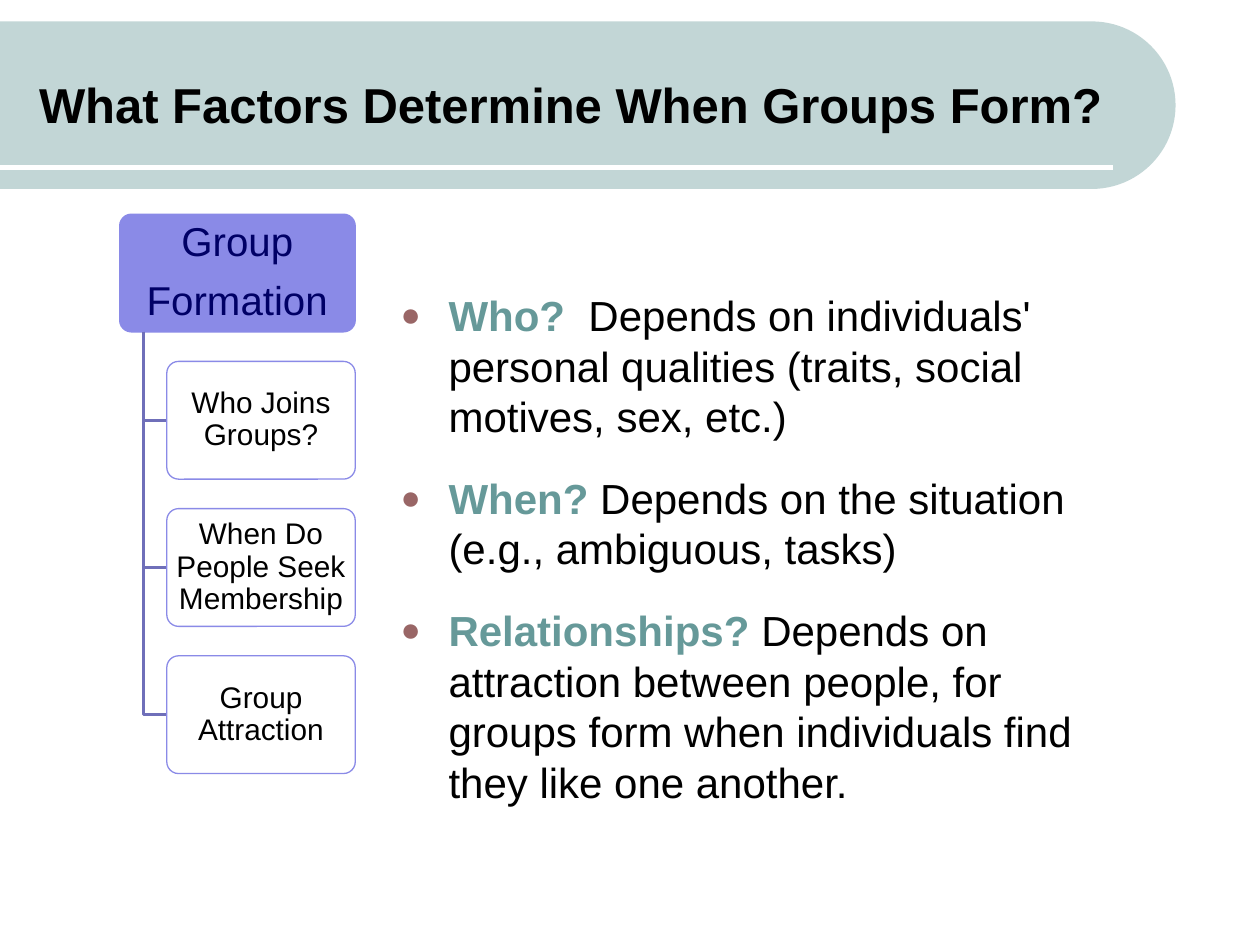
from lxml import etree
from pptx import Presentation
from pptx.dml.color import RGBColor
from pptx.enum.shapes import MSO_CONNECTOR, MSO_SHAPE
from pptx.enum.text import MSO_ANCHOR, MSO_AUTO_SIZE, PP_ALIGN
from pptx.oxml.ns import qn
from pptx.util import Inches, Pt

STRAIGHT = MSO_CONNECTOR.STRAIGHT
ROUNDED = MSO_SHAPE.ROUNDED_RECTANGLE
ROUND_END = MSO_SHAPE.ROUND_2_SAME_RECTANGLE
MIDDLE, TOP = MSO_ANCHOR.MIDDLE, MSO_ANCHOR.TOP
LEFT, CENTER = PP_ALIGN.LEFT, PP_ALIGN.CENTER
NO_FIT = MSO_AUTO_SIZE.NONE

COLORS = {
    "band": "C2D6D6", "white": "FFFFFF", "text": "000000", "navy": "000066",
    "keyword": "669999", "bullet": "996666", "root": "8A8AE7", "branch": "6F6FB9",
}
TITLE = "What Factors Determine When Groups Form?"
ROOT = ["Group", "Formation"]
QUESTIONS = ["Who Joins Groups?", "When Do People Seek Membership", "Group Attraction"]
FACTORS = [
    ("Who?  ", "Depends on individuals' personal qualities (traits, social motives, sex, etc.)"),
    ("When? ", "Depends on the situation (e.g., ambiguous, tasks)"),
    ("Relationships? ", "Depends on attraction between people, for groups form when "
                        "individuals find they like one another."),
]


def rgb(name):
    return RGBColor.from_string(COLORS[name])


def add_text(paragraph, text, size, color="text", bold=False):
    run = paragraph.add_run()
    run.text = text
    run.font.name = "Arial"
    run.font.size = Pt(size)
    run.font.bold = bold
    run.font.color.rgb = rgb(color)


def place(shape, left, top, width, height):
    shape.left, shape.top = Inches(left), Inches(top)
    shape.width, shape.height = Inches(width), Inches(height)


def paragraphs(frame, count):
    """Return the frame's first paragraph and as many new ones as needed."""
    return [frame.paragraphs[0]] + [frame.add_paragraph() for _ in range(count - 1)]


def set_bullet(paragraph, indent):
    props = paragraph._p.get_or_add_pPr()
    props.set("marL", str(Inches(indent)))
    props.set("indent", str(-Inches(indent)))
    color = etree.SubElement(props, qn("a:buClr"))
    etree.SubElement(color, qn("a:srgbClr")).set("val", COLORS["bullet"])
    etree.SubElement(props, qn("a:buSzPct")).set("val", "80000")
    etree.SubElement(props, qn("a:buFont")).set("typeface", "Arial")
    etree.SubElement(props, qn("a:buChar")).set("char", "●")


def add_header(slide, left, top, width, height):
    """Draw the round-ended band with its rule, and set the title over it."""
    # The band is an upright shape turned a quarter, about the same centre.
    offset = (width - height) / 2
    band = slide.shapes.add_shape(ROUND_END, Inches(left + offset), Inches(top - offset),
                                  Inches(height), Inches(width))
    band.rotation = 90
    band.adjustments[0], band.adjustments[1] = 0.5, 0
    band.shadow.inherit = False
    band.fill.solid()
    band.fill.fore_color.rgb = rgb("band")
    band.line.fill.background()

    rule_y = Inches(top + height - 0.17)
    rule = slide.shapes.add_connector(STRAIGHT, Inches(left), rule_y,
                                      Inches(left + width - 0.5), rule_y)
    rule.line.color.rgb = rgb("white")
    rule.line.width = Pt(3)
    etree.SubElement(rule._element.spPr, qn("a:effectLst"))

    title = slide.shapes.title
    place(title, left + 0.21, top + 0.08, 8.77, 1)
    frame = title.text_frame
    frame.auto_size, frame.word_wrap = NO_FIT, True
    frame.vertical_anchor = MIDDLE
    heading = frame.paragraphs[0]
    heading.alignment = LEFT
    add_text(heading, TITLE, 28, bold=True)
    add_text(heading, " ", 42)
    slide.shapes._spTree.append(title._element)


def add_factors(slide, left, top, width, height):
    body = slide.placeholders[1]
    place(body, left, top, width, height)
    frame = body.text_frame
    frame.auto_size, frame.word_wrap = NO_FIT, True
    frame.vertical_anchor = TOP
    for paragraph, (keyword, answer) in zip(paragraphs(frame, len(FACTORS)), FACTORS):
        paragraph.space_before = Pt(18)
        set_bullet(paragraph, 0.38)
        add_text(paragraph, keyword, 24, "keyword", bold=True)
        add_text(paragraph, answer, 24)


def add_node(slide, lines, left, top, width, height, fill, size, color, inset):
    node = slide.shapes.add_shape(ROUNDED, Inches(left), Inches(top),
                                  Inches(width), Inches(height))
    node.adjustments[0] = 0.1
    node.shadow.inherit = False
    node.fill.solid()
    node.fill.fore_color.rgb = rgb(fill)
    node.line.color.rgb = rgb("root")
    node.line.width = Pt(0.75)
    frame = node.text_frame
    frame.word_wrap = True
    frame.vertical_anchor = MIDDLE
    frame.margin_left = frame.margin_right = Inches(inset)
    frame.margin_top = frame.margin_bottom = Inches(inset / 2)
    for paragraph, line in zip(paragraphs(frame, len(lines)), lines):
        paragraph.alignment = CENTER
        paragraph.line_spacing = 0.9
        paragraph.space_after = Pt(round(size * 0.4))
        add_text(paragraph, line, size, color)


def add_branch(slide, left, top, right, bottom):
    builder = slide.shapes.build_freeform(Inches(left), Inches(top))
    builder.add_line_segments([(Inches(left), Inches(bottom)),
                               (Inches(right), Inches(bottom))], close=False)
    branch = builder.convert_to_shape()
    branch.shadow.inherit = False
    branch.fill.background()
    branch.line.color.rgb = rgb("branch")
    branch.line.width = Pt(2)


def add_hierarchy(slide, left, top, width, height):
    """Draw the root node and, below it, the questions that hang from it."""
    pitch_to_node = 1.25
    node_height = height / (len(QUESTIONS) * pitch_to_node + 1)
    pitch = node_height * pitch_to_node
    indent = width / 5
    add_node(slide, ROOT, left, top, width, node_height, "root", 23, "navy", 0.05)
    for row, question in enumerate(QUESTIONS, start=1):
        node_top = top + row * pitch
        add_branch(slide, left + indent / 2, top + node_height,
                   left + indent, node_top + node_height / 2)
        add_node(slide, [question], left + indent, node_top, width - indent, node_height,
                 "white", 17, "text", 0.04)


def main():
    deck = Presentation()
    deck.slide_width, deck.slide_height = Inches(10), Inches(7.5)
    slide = deck.slides.add_slide(deck.slide_layouts[1])
    add_header(slide, 0, 0.17, 9.33, 1.33)
    add_factors(slide, 3.08, 2.25, 5.67, 4.83)
    add_hierarchy(slide, 0.95, 1.7, 1.87, 4.44)
    deck.save("out.pptx")


if __name__ == "__main__":
    main()
